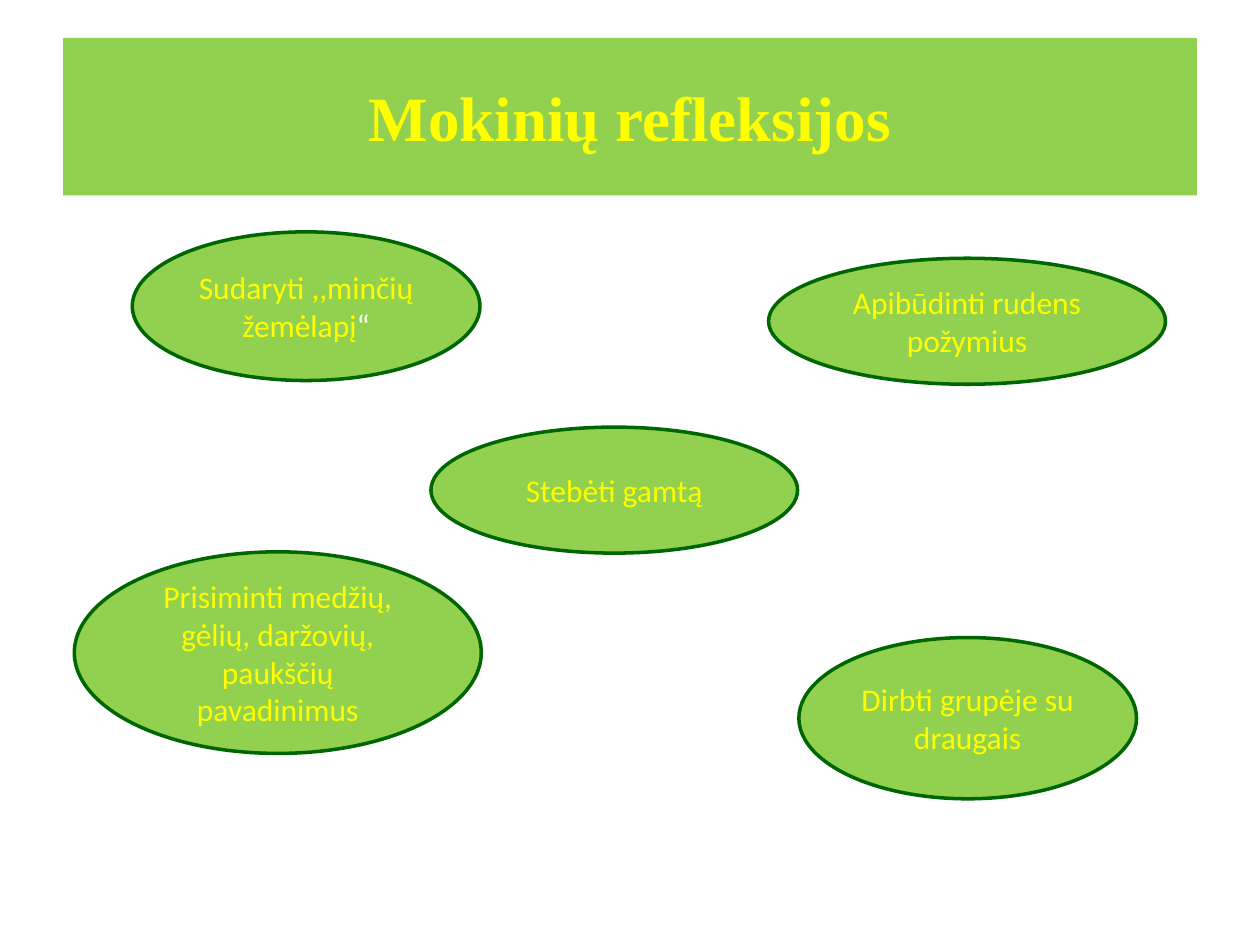
"""Build the slide of pupils' reflections around a central idea."""
from dataclasses import dataclass

from pptx import Presentation
from pptx.dml.color import RGBColor
from pptx.enum.shapes import MSO_SHAPE as Shape
from pptx.enum.text import MSO_ANCHOR as Anchor, PP_ALIGN as Align
from pptx.util import Inches, Pt


@dataclass(frozen=True)
class Theme:
    fill: str = "92D050"
    outline: str = "006600"
    text: str = "FFFF00"
    closing_quote: str = "FFFFFF"
    title_font: str = "Times New Roman"
    body_font: str = "Calibri"
    title_size: int = 36
    body_size: int = 18
    line_width: int = 2


THEME = Theme()
SLIDE_SIZE = (10, 7.5)
TITLE = "Mokinių refleksijos"
TITLE_BOX = (0.5, 0.3, 9, 1.25)
REFLECTIONS = [
    (("Stebėti gamtą",), (3.42, 3.39, 2.91, 1)),
    (("Apibūdinti rudens požymius",), (6.1, 2.05, 3.15, 1)),
    (("Prisiminti medžių, gėlių, daržovių, paukščių pavadinimus",), (0.59, 4.38, 3.23, 1.6)),
    (("Sudaryti ,,minčių žemėlapį", "“"), (1.05, 1.84, 2.76, 1.18)),
    (("Dirbti grupėje su draugais",), (6.34, 5.06, 2.68, 1.28)),
]


def paint(fill, color):
    fill.solid()
    fill.fore_color.rgb = RGBColor.from_string(color)


def write(shape, parts, font_name, size, bold=False):
    frame = shape.text_frame
    frame.word_wrap = True
    frame.vertical_anchor = Anchor.MIDDLE
    paragraph = frame.paragraphs[0]
    paragraph.alignment = Align.CENTER
    for text, color in zip(parts, (THEME.text, THEME.closing_quote)):
        run = paragraph.add_run()
        run.text = text
        run.font.name = font_name
        run.font.size = Pt(size)
        run.font.bold = bold
        run.font.color.rgb = RGBColor.from_string(color)


def add_title(slide):
    title = slide.shapes.title
    title.left, title.top, title.width, title.height = map(Inches, TITLE_BOX)
    paint(title.fill, THEME.fill)
    write(title, (TITLE,), THEME.title_font, THEME.title_size, bold=True)


def add_reflection(slide, parts, box):
    ellipse = slide.shapes.add_shape(Shape.OVAL, *map(Inches, box))
    ellipse.shadow.inherit = False
    paint(ellipse.fill, THEME.fill)
    paint(ellipse.line.fill, THEME.outline)
    ellipse.line.width = Pt(THEME.line_width)
    write(ellipse, parts, THEME.body_font, THEME.body_size)


def main():
    presentation = Presentation()
    presentation.slide_width, presentation.slide_height = map(Inches, SLIDE_SIZE)
    slide = presentation.slides.add_slide(presentation.slide_layouts.get_by_name("Title Only"))
    add_title(slide)
    for parts, box in REFLECTIONS:
        add_reflection(slide, parts, box)
    presentation.save("out.pptx")


if __name__ == "__main__":
    main()
